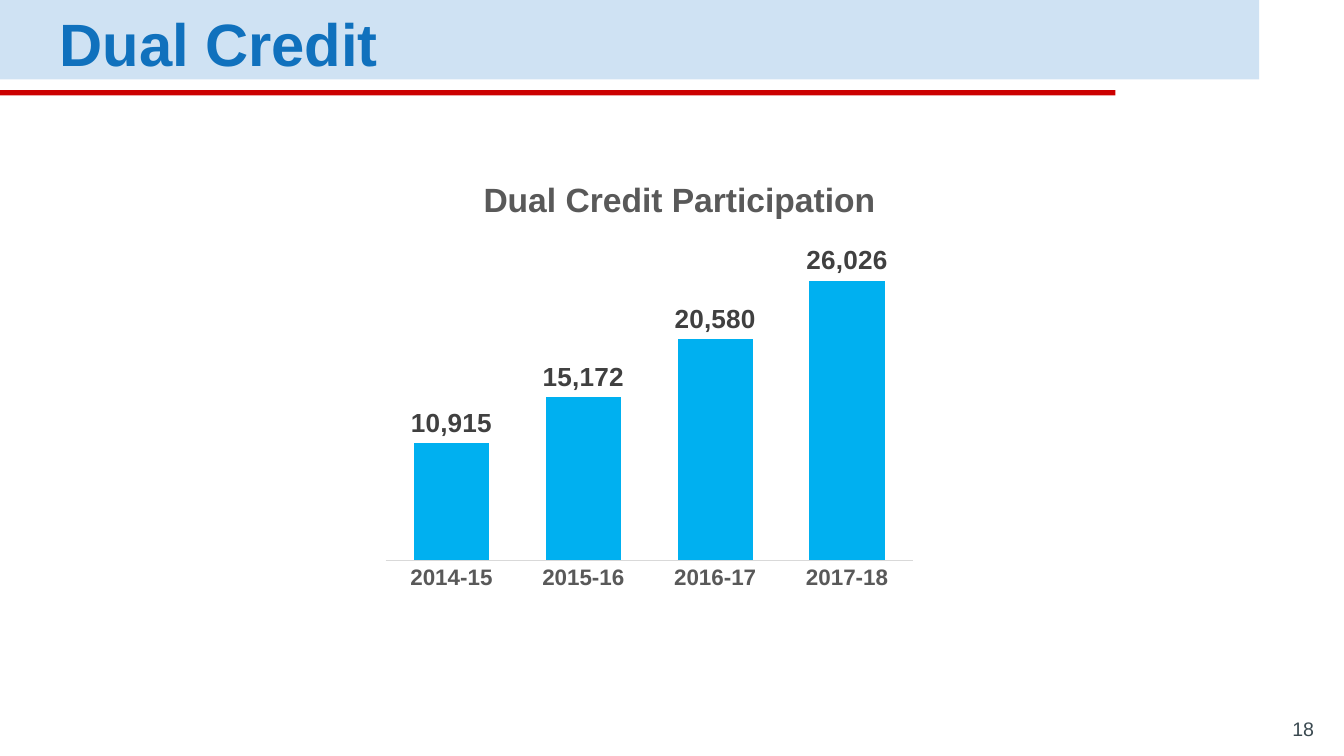
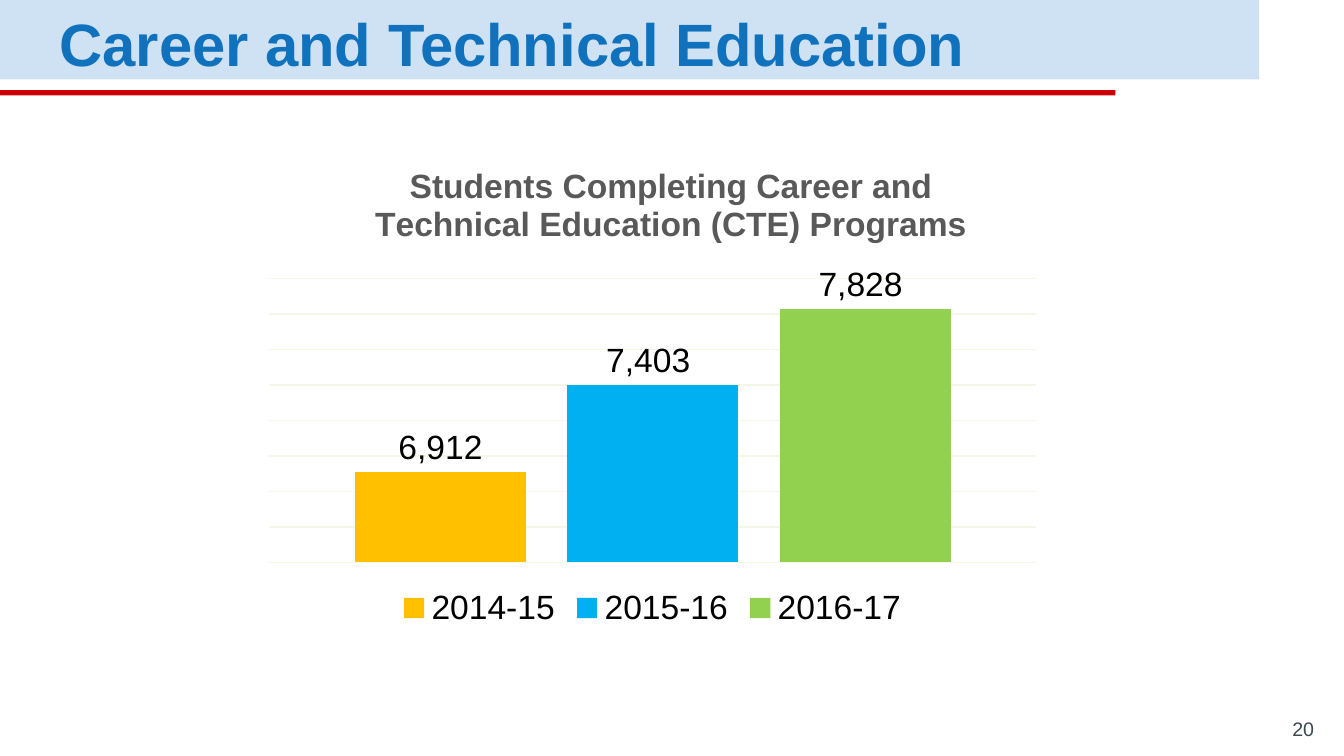
from lxml import etree
from pptx import Presentation
from pptx import util as u
from pptx.chart import data as chart_data
from pptx.dml.color import RGBColor
from pptx.enum import chart as ch
from pptx.enum import shapes, text
from pptx.oxml import ns

PX = 4572  # EMU in one px, 200 px to the inch


class Theme:
    font = "Arial"
    band, rule, title = "CFE2F3", "CC0000", "1071BD"
    page, black = "3A4950", "000000"
    grey, label, axis, grid = "595959", "404040", "D9D9D9", "F3F8E6"
    amber, blue, green = "FFC000", "00B0F0", "92D050"
    title_size, chart_title_size, page_size = 32, 18, 10.5
    plain = "#,##0"
    padded = r"#,##0_);\(#,##0\)"
    accounting = r'_(* #,##0_);_(* \(#,##0\);_(* "-"??_);_(@_)'


# Formatting helpers
def px(*lengths):
    return [u.Emu(length * PX) for length in lengths]


def set_all(target, **values):
    for name, value in values.items():
        setattr(target, name, value)


def set_font(font, size, color, bold=False):
    set_all(font, name=Theme.font, size=u.Pt(size), bold=bold)
    font.color.rgb = RGBColor.from_string(color)


def set_line(line, color):
    line.color.rgb = RGBColor.from_string(color)
    line.width = u.Pt(0.75)


def set_layout(parent, index, **percents):
    """Place a chart part by percentages of the chart area."""
    for old in parent.findall(ns.qn("c:layout")):
        parent.remove(old)
    layout = etree.Element(ns.qn("c:layout"))
    manual = etree.SubElement(layout, ns.qn("c:manualLayout"))
    if "w" in percents:
        etree.SubElement(manual, ns.qn("c:layoutTarget"), val="inner")
    for axis in "xy":
        etree.SubElement(manual, ns.qn(f"c:{axis}Mode"), val="edge")
    for name, value in percents.items():
        etree.SubElement(manual, ns.qn(f"c:{name}"), val=f"{value / 100:.4f}")
    parent.insert(index, layout)


# Slide frame
def add_band(slide, box, color):
    shape = slide.shapes.add_shape(shapes.MSO_SHAPE.RECTANGLE, *px(*box))
    shape.shadow.inherit = False
    shape.fill.solid()
    shape.fill.fore_color.rgb = RGBColor.from_string(color)
    shape.line.fill.background()


def add_text(slide, box, words, font, anchor, **paragraph_format):
    frame = slide.shapes.add_textbox(*px(*box)).text_frame
    inset = px(20)[0]
    set_all(frame, word_wrap=True, vertical_anchor=anchor, margin_left=inset,
            margin_right=inset, margin_top=inset, margin_bottom=inset)
    paragraph = frame.paragraphs[0]
    paragraph.text = words
    set_all(paragraph, **paragraph_format)
    set_font(paragraph.runs[0].font, *font)


def add_frame(presentation, title, page):
    slide = presentation.slides.add_slide(presentation.slide_layouts[6])
    add_band(slide, (0, 0, 1874, 118), Theme.band)
    add_band(slide, (0, 134, 1660, 8), Theme.rule)
    add_text(slide, (69, 6, 1806, 98), title,
             (Theme.title_size, Theme.title, True), text.MSO_ANCHOR.MIDDLE,
             line_spacing=1.15, space_after=u.Pt(16))
    add_text(slide, (1855, 1067, 120, 52), page,
             (Theme.page_size, Theme.page), text.MSO_ANCHOR.BOTTOM,
             alignment=text.PP_ALIGN.RIGHT)
    return slide


# Charts
def add_columns(slide, box, title, title_at, plot_at, categories, series,
                label_font, scale, gap, overlap):
    data = chart_data.CategoryChartData(number_format=Theme.plain)
    data.categories = categories
    for name, values, _, _ in series:
        data.add_series(name, values)
    chart = slide.shapes.add_chart(
        ch.XL_CHART_TYPE.COLUMN_CLUSTERED, *px(*box), data).chart
    set_font(chart.font, 10, Theme.black)
    chart.has_legend = False

    frame = chart.chart_title.text_frame
    frame.text = title
    set_font(frame.paragraphs[0].runs[0].font,
             Theme.chart_title_size, Theme.grey, True)
    set_layout(chart.chart_title.element, 1, **title_at)
    set_layout(chart.element.find(f".//{ns.qn('c:plotArea')}"), 0, **plot_at)

    set_all(chart.value_axis, visible=False, has_major_gridlines=False, **scale)
    plot = chart.plots[0]
    set_all(plot, vary_by_categories=False, gap_width=gap, overlap=overlap)
    for column, (_, _, color, number_format) in zip(plot.series, series):
        column.format.fill.solid()
        column.format.fill.fore_color.rgb = RGBColor.from_string(color)
        labels = column.data_labels
        set_all(labels, show_value=True, number_format=number_format,
                number_format_is_linked=False,
                position=ch.XL_LABEL_POSITION.OUTSIDE_END)
        set_font(labels.font, *label_font)
    return chart


def add_dual_credit(presentation):
    slide = add_frame(presentation, "Dual Credit", "18")
    chart = add_columns(
        slide, (571, 220, 930, 780), "Dual Credit Participation",
        dict(x=15, y=4.5), dict(x=0.3, y=17.2, w=84.4, h=61.5),
        ["2014-15", "2015-16", "2016-17", "2017-18"],
        [("Series 1", [10915, 15172, 20580, 26026], Theme.blue, Theme.plain)],
        (14, Theme.label, True),
        dict(minimum_scale=0, maximum_scale=30000), gap=75, overlap=-25)
    axis = chart.category_axis
    axis.major_tick_mark = ch.XL_TICK_MARK.NONE
    set_font(axis.tick_labels.font, 12, Theme.grey, True)
    set_line(axis.format.line, Theme.axis)


def add_career_education(presentation):
    slide = add_frame(presentation, "Career and Technical Education", "20")
    chart = add_columns(
        slide, (377, 233, 1188, 710),
        "Students Completing Career and Technical Education (CTE) Programs",
        dict(x=14.5, y=0.3), dict(x=2, y=25.6, w=96.1, h=59.5), ["1"],
        [("2014-15", [6912], Theme.amber, Theme.accounting),
         ("2015-16", [7403], Theme.blue, Theme.padded),
         ("2016-17", [7828], Theme.green, Theme.padded)],
        (18, Theme.black),
        dict(minimum_scale=6400, maximum_scale=8000, major_unit=200),
        gap=100, overlap=-24)
    chart.category_axis.visible = False
    chart.value_axis.has_major_gridlines = True
    set_line(chart.value_axis.major_gridlines.format.line, Theme.grid)
    chart.has_legend = True
    set_all(chart.legend, position=ch.XL_LEGEND_POSITION.BOTTOM,
            include_in_layout=False)
    set_font(chart.legend.font, 18, Theme.black)


def main():
    presentation = Presentation()
    width, height = px(2000, 1125)
    set_all(presentation, slide_width=width, slide_height=height)
    add_dual_credit(presentation)
    add_career_education(presentation)
    presentation.save("out.pptx")


if __name__ == "__main__":
    main()
